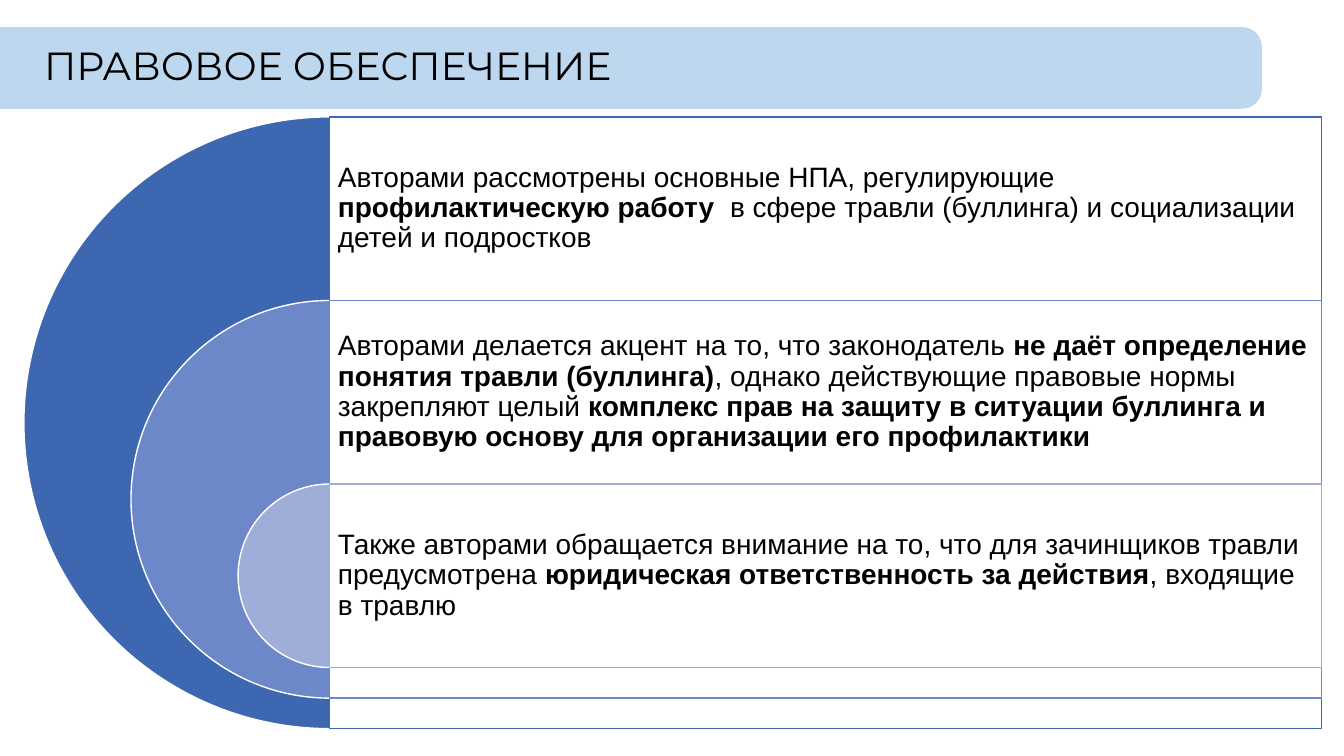
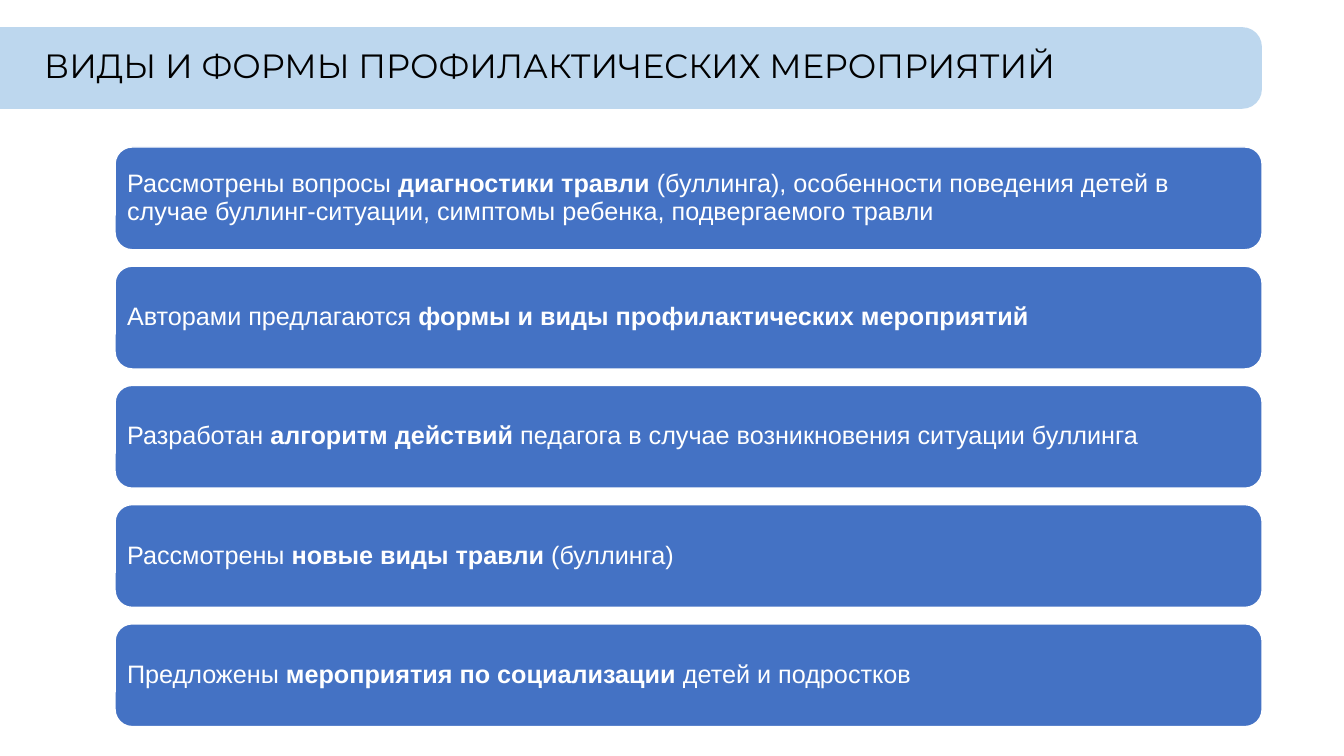
from dataclasses import dataclass

from pptx import Presentation
from pptx.dml.color import RGBColor
from pptx.enum.shapes import MSO_SHAPE
from pptx.enum.text import MSO_ANCHOR, PP_ALIGN
from pptx.util import Pt

# Content: ** marks bold text
LEGAL_TITLE = "ПРАВОВОЕ ОБЕСПЕЧЕНИЕ"
LEGAL_POINTS = [
    "Авторами рассмотрены основные НПА, регулирующие **профилактическую работу ** "
    "в сфере травли (буллинга) и социализации детей и подростков",
    "Авторами делается акцент на то, что законодатель **не даёт определение понятия "
    "травли (буллинга)**, однако действующие правовые нормы закрепляют целый "
    "**комплекс прав на защиту в ситуации буллинга и правовую основу для организации "
    "его профилактики**",
    "Также авторами обращается внимание на то, что для зачинщиков травли предусмотрена "
    "**юридическая ответственность за действия**, входящие в травлю",
]
FORMS_TITLE = "ВИДЫ И ФОРМЫ ПРОФИЛАКТИЧЕСКИХ МЕРОПРИЯТИЙ"
FORMS_POINTS = [
    "Рассмотрены вопросы **диагностики травли **(буллинга), особенности поведения детей "
    "в случае буллинг-ситуации, симптомы ребенка, подвергаемого травли",
    "Авторами предлагаются **формы и виды профилактических мероприятий**",
    "Разработан **алгоритм действий **педагога в случае возникновения ситуации буллинга",
    "Рассмотрены **новые виды травли **(буллинга)",
    "Предложены **мероприятия по социализации **детей и подростков",
]


@dataclass(frozen=True)
class Theme:
    black: str = "000000"
    white: str = "FFFFFF"
    band: str = "BDD7EE"
    bar: str = "4472C4"
    rings: tuple = ("3E67B2", "6C88C8", "9FAED8")
    title_font: str = "Montserrat"
    body_font: str = "Arial"
    title_size: int = 28
    long_title_size: int = 24
    panel_size: int = 20
    bar_size: int = 18


THEME = Theme()


# Helpers
def add_shape(slide, kind, left, top, width, height, fill, line=None):
    sp = slide.shapes.add_shape(kind, Pt(left), Pt(top), Pt(width), Pt(height))
    sp.shadow.inherit = False
    sp.fill.solid()
    sp.fill.fore_color.rgb = RGBColor.from_string(fill)
    if line:
        sp.line.color.rgb = RGBColor.from_string(line)
        sp.line.width = Pt(1)
    else:
        sp.line.fill.background()
    return sp


def write(sp, text, *, size, color=THEME.black, font=THEME.body_font, insets=(7.2, 3.6, 7.2, 3.6)):
    """Fill a shape with one paragraph; insets run left, top, right, bottom."""
    tf = sp.text_frame
    tf.word_wrap = True
    tf.vertical_anchor = MSO_ANCHOR.MIDDLE
    tf.margin_left, tf.margin_top, tf.margin_right, tf.margin_bottom = map(Pt, insets)
    p = tf.paragraphs[0]
    p.alignment = PP_ALIGN.LEFT
    p.line_spacing = 0.9
    for i, part in enumerate(text.split("**")):
        if part:
            r = p.add_run()
            r.text = part
            r.font.name = font
            r.font.size = Pt(size)
            r.font.bold = i % 2 == 1
            r.font.color.rgb = RGBColor.from_string(color)


def add_titled_slide(prs, title, size):
    s = prs.slides.add_slide(prs.slide_layouts[6])
    band = add_shape(s, MSO_SHAPE.ROUNDED_RECTANGLE, -25.2, 19.4, 926.6, 58.3, THEME.band)
    band.adjustments[0] = 0.24
    box = s.shapes.add_textbox(Pt(24.5), Pt(25.2), Pt(828), Pt(46))
    write(box, title, size=size, font=THEME.title_font)
    return s


# Nested half circles with a panel beside each
def add_half_circles(s, points):
    top, center, outer, panel_width = 83.5, 235.6, 437, 708.5
    step, shrink, pad = 0.3 * outer, 0.35 * outer, 5.8
    for i, (text, color) in enumerate(zip(points, THEME.rings)):
        y, diameter = top + i * step, outer - i * shrink
        half = add_shape(s, MSO_SHAPE.PIE, center - diameter / 2, y, diameter, diameter,
                         color, THEME.white)
        half.adjustments[0], half.adjustments[1] = 54, 162  # quarter turn is 54
        panel = add_shape(s, MSO_SHAPE.RECTANGLE, center, y, panel_width, diameter,
                          THEME.white, color)
        write(panel, text, size=THEME.panel_size,
              insets=(pad, pad, pad, pad + diameter - step))


# Stack of equal bars
def add_bars(s, points):
    top, pitch, height = 105, 85.15, 73.4
    for i, text in enumerate(points):
        bar = add_shape(s, MSO_SHAPE.ROUNDED_RECTANGLE, 82.2, top + i * pitch, 819.3, height,
                        THEME.bar, THEME.white)
        # The preset adds its own corner inset to these margins
        write(bar, text, size=THEME.bar_size, color=THEME.white, insets=(5, 5, 5, 5))


def main():
    prs = Presentation()
    prs.slide_width, prs.slide_height = Pt(960), Pt(540)
    add_half_circles(add_titled_slide(prs, LEGAL_TITLE, THEME.title_size), LEGAL_POINTS)
    add_bars(add_titled_slide(prs, FORMS_TITLE, THEME.long_title_size), FORMS_POINTS)
    prs.save("out.pptx")


if __name__ == "__main__":
    main()
